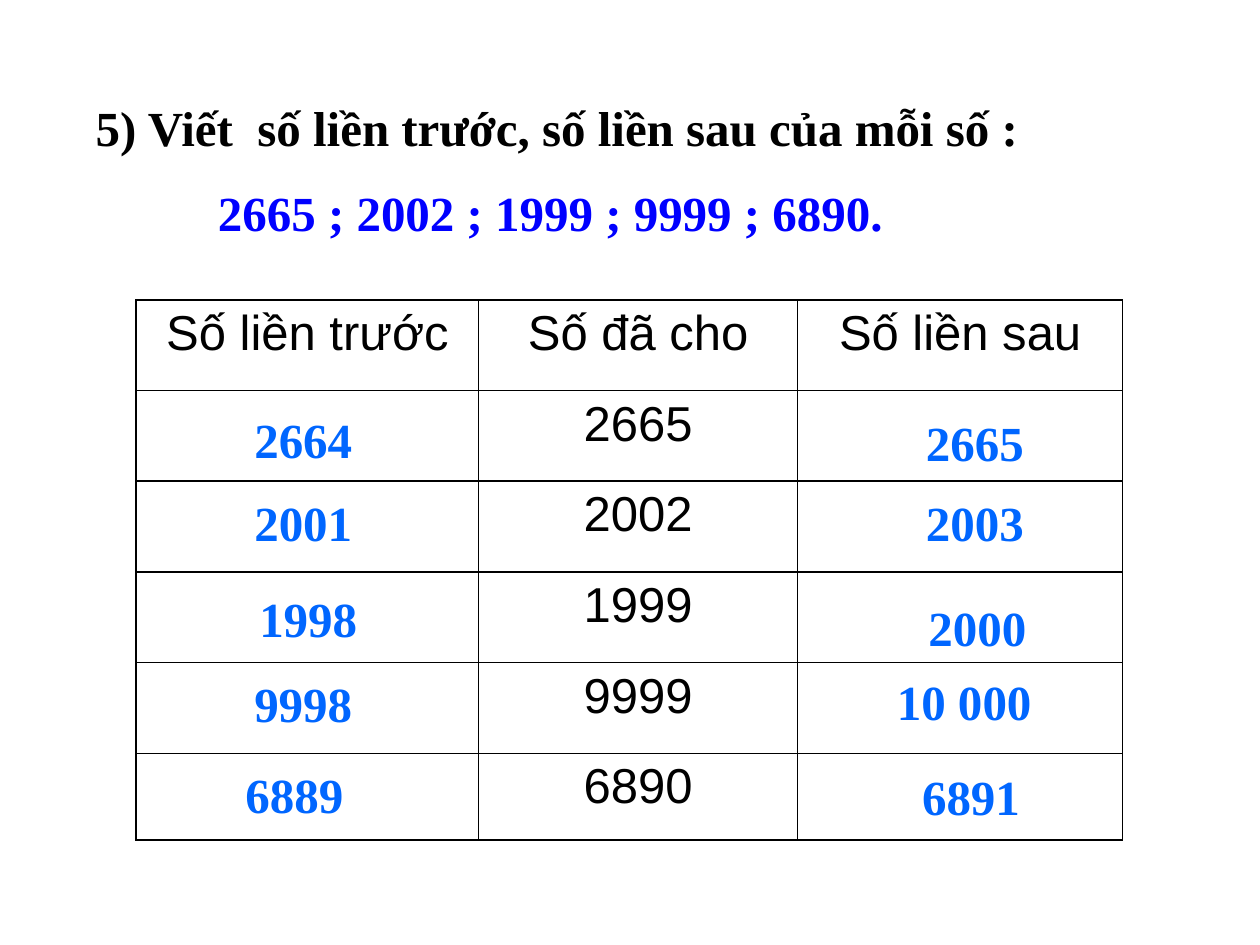
from lxml.etree import SubElement as Sub
from pptx import Presentation
from pptx.dml.color import RGBColor as RGB
from pptx.enum.text import MSO_ANCHOR as Anchor, MSO_AUTO_SIZE as Auto, PP_ALIGN as Align
from pptx.oxml.ns import qn
from pptx.util import Inches, Pt

BLACK = RGB(0x00, 0x00, 0x00)
BLUE = RGB(0x00, 0x00, 0xFF)
SKY = RGB(0x00, 0x66, 0xFF)

SERIF = {"name": "Times New Roman", "size": Pt(28), "bold": True}
SANS = {"name": "Arial", "size": Pt(28), "bold": False}

TASK = "5) Viết  số liền trước, số liền sau của mỗi số :"
HEADS = ["Số liền trước", "Số đã cho", "Số liền sau"]
GIVEN = ["2665", "2002", "1999", "9999", "6890"]
COLS = [2.72, 2.53, 2.58]
ROWS = [0.72] * 5 + [0.69]

# Answers: text, left, top, width
BEFORE = [
    ("2664", 1.92, 3.2, 1.08),
    ("2001", 1.92, 3.86, 1.08),
    ("1998", 1.96, 4.62, 1),
    ("9998", 1.92, 5.29, 1),
    ("6889", 1.85, 6.02, 1),
]
AFTER = [
    ("2665", 7.25, 3.22, 1.08),
    ("2003", 7.25, 3.86, 1.08),
    ("2000", 7.27, 4.69, 1),
    ("10 000", 7.02, 5.28, 1.33),
    ("6891", 7.22, 6.03, 1),
]


def write(para, text, style, color, align=Align.LEFT):
    para.alignment = align
    run = para.add_run()
    run.text = text
    for key, value in style.items():
        setattr(run.font, key, value)
    run.font.color.rgb = color


def set_frame(frame):
    frame.word_wrap = True
    frame.auto_size = Auto.NONE
    frame.vertical_anchor = Anchor.MIDDLE


def add_task(slide):
    title = slide.shapes.title
    title.left, title.top = Inches(0.66), Inches(0.71)
    title.width, title.height = Inches(8.73), Inches(1.27)
    frame = title.text_frame
    set_frame(frame)
    write(frame.paragraphs[0], TASK, SERIF, BLACK)
    para = frame.add_paragraph()
    para.space_before = Pt(15)
    para._p.get_or_add_pPr().set("marL", str(Inches(0.97)))
    write(para, " ; ".join(GIVEN) + ".", SERIF, BLUE)


def add_edges(cell):
    props = cell._tc.get_or_add_tcPr()
    for pos, side in enumerate(("lnL", "lnR", "lnT", "lnB")):
        line = props.makeelement(qn("a:" + side), {"w": str(Pt(1))})
        fill = Sub(line, qn("a:solidFill"))
        Sub(fill, qn("a:srgbClr"), val=str(BLACK))
        props.insert(pos, line)


def add_grid(slide):
    shape = slide.shapes.add_table(
        len(ROWS), len(COLS), Inches(1.08), Inches(2.38),
        Inches(sum(COLS)), Inches(sum(ROWS)))
    table = shape.table
    table.first_row = table.horz_banding = False
    for col, width in zip(table.columns, COLS):
        col.width = Inches(width)
    for row, height in zip(table.rows, ROWS):
        row.height = Inches(height)
    for cell in table.iter_cells():
        cell.fill.background()
        add_edges(cell)
    # Header row, then the given numbers in the middle column
    cells = [(0, c, text) for c, text in enumerate(HEADS)]
    cells += [(r, 1, text) for r, text in enumerate(GIVEN, 1)]
    for r, c, text in cells:
        para = table.cell(r, c).text_frame.paragraphs[0]
        write(para, text, SANS, BLACK, Align.CENTER)


def add_answer(slide, text, left, top, width):
    box = slide.shapes.add_textbox(
        Inches(left), Inches(top), Inches(width), Inches(0.57))
    set_frame(box.text_frame)
    write(box.text_frame.paragraphs[0], text, SERIF, SKY)


def main():
    deck = Presentation()
    deck.slide_width, deck.slide_height = Inches(10), Inches(7.5)
    slide = deck.slides.add_slide(deck.slide_layouts[5])
    add_task(slide)
    add_grid(slide)
    for answer in BEFORE + AFTER:
        add_answer(slide, *answer)
    deck.save("out.pptx")


if __name__ == "__main__":
    main()
